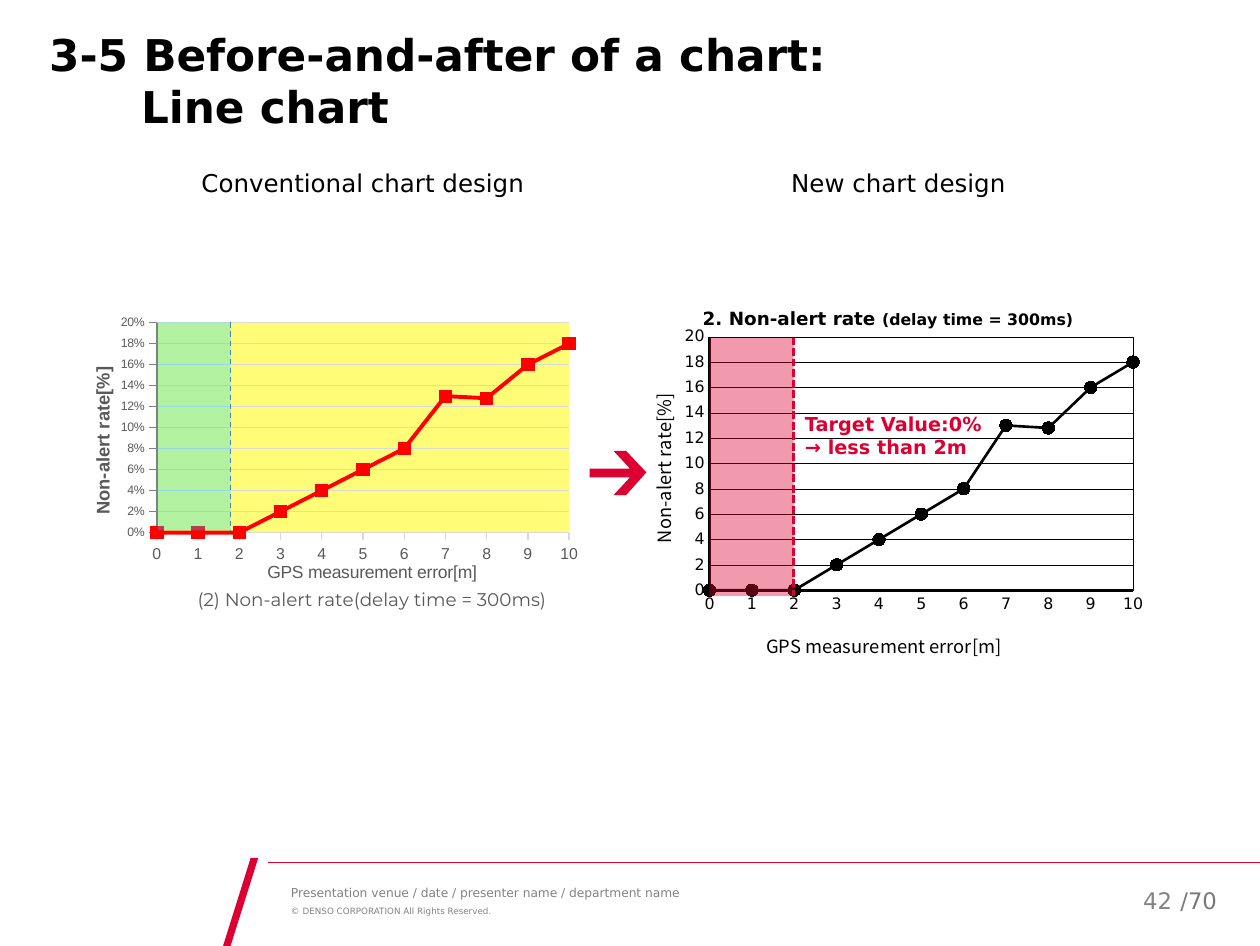
"""Build the before-and-after line chart slide."""
from lxml.etree import SubElement
from pptx import Presentation
from pptx.chart.data import CategoryChartData
from pptx.dml.color import RGBColor
from pptx.enum.chart import XL_CHART_TYPE, XL_MARKER_STYLE, XL_TICK_MARK
from pptx.enum.dml import MSO_LINE
from pptx.enum.shapes import MSO_CONNECTOR, MSO_SHAPE
from pptx.enum.text import MSO_ANCHOR, MSO_AUTO_SIZE, PP_ALIGN
from pptx.oxml import parse_xml
from pptx.oxml.ns import nsdecls, qn
from pptx.util import Inches, Pt

RED, INK, GREY, BLACK = "DC0032", "010000", "828282", "000000"
SANS, CJK = "DejaVu Sans", "Noto Sans CJK JP"


def tint(code):
    return RGBColor.from_string(code)


def style(font, size, color, face=SANS, bold=False):
    font.size, font.name, font.bold = Pt(size), face, bold
    font.color.rgb = tint(color)


def write(para, text, **look):
    run = para.add_run()
    run.text = text
    style(run.font, **look)


def stroke(line, color, width, dash=None):
    line.color.rgb = tint(color)
    line.width = Pt(width)
    if dash:
        line.dash_style = dash


def settle(owner, x, y, w=None, h=None):
    old = owner.find(qn("c:layout"))
    if old is not None:
        owner.remove(old)
    layout = parse_xml(f"<c:layout {nsdecls('c')}><c:manualLayout/></c:layout>")
    marks = {"xMode": "edge", "yMode": "edge", "x": x, "y": y}
    if w:
        marks = {"layoutTarget": "inner", **marks, "w": w, "h": h}
    for name, value in marks.items():
        SubElement(layout[0], qn("c:" + name)).set("val", str(value))
    head = owner.find(qn("c:tx"))
    if head is None:
        owner.insert(0, layout)
    else:
        head.addnext(layout)


def caption(title, runs, spot, turn=False):
    frame = title.text_frame
    for text, look in runs:
        write(frame.paragraphs[0], text, **look)
    if turn:
        frame._txBody.bodyPr.set("rot", "-5400000")
    settle(title._element, *spot)


def paint_plot(area, fill, edge):
    inside = (f'<a:solidFill><a:srgbClr val="{fill}"/></a:solidFill>'
              if fill else "<a:noFill/>")
    rim = (f'<a:ln w="3175"><a:solidFill><a:srgbClr val="{edge}"/></a:solidFill></a:ln>'
           if edge else "<a:ln><a:noFill/></a:ln>")
    for old in area.findall(qn("c:spPr")):
        area.remove(old)
    area.append(parse_xml(f"<c:spPr {nsdecls('c', 'a')}>{inside}{rim}</c:spPr>"))


class Deck:
    """Hold the slide and its grid of 100 columns by 75.1 rows."""

    def __init__(self):
        self.show = Presentation()
        self.show.slide_width, self.show.slide_height = Inches(10), Inches(7.51)
        self.unit = self.show.slide_width / 100
        self.slide = self.show.slides.add_slide(self.show.slide_layouts[5])
        self.shapes = self.slide.shapes

    def grid(self, *cells):
        return [round(cell * self.unit) for cell in cells]

    def title(self, box, first, second, **look):
        shape = self.shapes.title
        shape.left, shape.top, shape.width, shape.height = self.grid(*box)
        frame = shape.text_frame
        frame.auto_size, frame.vertical_anchor = MSO_AUTO_SIZE.NONE, MSO_ANCHOR.TOP
        frame.margin_left, frame.margin_right = self.grid(3.9, 15.7)
        frame.margin_top = frame.margin_bottom = 0
        para = frame.paragraphs[0]
        para.alignment = PP_ALIGN.LEFT
        inset, = self.grid(7.3)
        props = para._p.get_or_add_pPr()
        props.set("marL", str(inset))
        props.set("indent", str(-inset))
        write(para, first, **look)
        para.add_line_break()
        write(para, second, **look)

    def label(self, box, *lines, align=PP_ALIGN.LEFT, anchor=MSO_ANCHOR.TOP,
              tight=False, wrap=False, lead=None, **look):
        frame = self.shapes.add_textbox(*self.grid(*box)).text_frame
        frame.word_wrap, frame.vertical_anchor = wrap, anchor
        if tight:
            frame.margin_left = frame.margin_right = 0
            frame.margin_top = frame.margin_bottom = 0
        for spot, line in enumerate(lines):
            para = frame.add_paragraph() if spot else frame.paragraphs[0]
            para.alignment = align
            if lead:
                para.line_spacing = lead
            write(para, line, **look)

    def rule(self, start, end, color, width, dash=None):
        line = self.shapes.add_connector(MSO_CONNECTOR.STRAIGHT, *self.grid(*start, *end))
        stroke(line.line, color, width, dash)
        SubElement(line._element.spPr, qn("a:effectLst"))

    def outline(self, points, color):
        first, *rest = [self.grid(*point) for point in points]
        pen = self.shapes.build_freeform(*first)
        pen.add_line_segments(rest, close=True)
        self.fill(pen.convert_to_shape(), color)

    def fill(self, shape, color, alpha=None):
        shape.shadow.inherit = False
        shape.fill.solid()
        shape.fill.fore_color.rgb = tint(color)
        shape.line.fill.background()
        if alpha:
            hue = shape._element.spPr.find(".//" + qn("a:srgbClr"))
            SubElement(hue, qn("a:alpha")).set("val", str(alpha * 1000))

    def zone(self, box, color, alpha, *edge):
        left, top, width, height = box
        area = self.shapes.add_shape(MSO_SHAPE.RECTANGLE, *self.grid(*box))
        self.fill(area, color, alpha)
        self.rule((left + width, top), (left + width, top + height), *edge)

    def chart(self, box, values, peak, form, plot, mark, color, width, heads,
              axes, mesh, tick, fill=None, edge=None):
        data = CategoryChartData()
        data.categories = [str(step) for step in range(len(values))]
        data.add_series("Series 1", values)
        chart = self.shapes.add_chart(
            XL_CHART_TYPE.LINE_MARKERS, *self.grid(*box), data).chart
        chart.has_legend, chart.has_title = False, True
        caption(chart.chart_title, *heads[0])
        scale, cats = chart.value_axis, chart.category_axis
        for axis, head, (look, line) in zip((cats, scale), heads[1:], axes):
            caption(axis.axis_title, *head, turn=axis is scale)
            style(axis.tick_labels.font, **look)
            stroke(axis.format.line, *line)
            axis.major_tick_mark, axis.minor_tick_mark = tick, XL_TICK_MARK.NONE
        scale.minimum_scale, scale.maximum_scale = 0, peak
        scale.major_unit = peak / 10
        scale.tick_labels.number_format = form
        scale.tick_labels.number_format_is_linked = False
        scale.has_major_gridlines = True
        stroke(scale.major_gridlines.format.line, *mesh)
        root = scale._element
        for old in root.findall(qn("c:crossBetween")):
            root.remove(old)
        root.find(qn("c:crosses")).addnext(
            parse_xml(f'<c:crossBetween {nsdecls("c")} val="midCat"/>'))
        chart.plots[0].vary_by_categories = False
        series = chart.plots[0].series[0]
        series.smooth = False
        stroke(series.format.line, color, width)
        series.marker.style, series.marker.size = mark, 7
        series.marker.format.fill.solid()
        series.marker.format.fill.fore_color.rgb = tint(color)
        stroke(series.marker.format.line, color, 0.75)
        area = chart._chartSpace.find(".//" + qn("c:plotArea"))
        settle(area, *plot)
        paint_plot(area, fill, edge)


def main():
    deck = Deck()
    deck.rule((21.3, 68.45), (100, 68.45), RED, 0.75)
    deck.outline([(20.5, 68.1), (19.9, 68.1), (17.7, 75.1), (18.3, 75.1)], RED)
    deck.label((92.7, 69.9, 5.2, 3.2), "/70", anchor=MSO_ANCHOR.MIDDLE, size=13, color="797979")
    deck.label((82.8, 69.5, 11.2, 4), "42", anchor=MSO_ANCHOR.MIDDLE, wrap=True,
               align=PP_ALIGN.RIGHT, size=13, color=GREY)
    deck.label((23.1, 70.3, 63, 1.2), "Presentation venue / date / presenter name / department name",
               tight=True, wrap=True, size=7, color=GREY)
    deck.label((23.1, 71.9, 63, 0.8), "© DENSO CORPORATION All Rights Reserved.",
               tight=True, wrap=True, size=5, color=GREY)
    deck.title((0, 2.2, 100, 9), "3-5 Before-and-after of a chart:", "Line chart",
               size=25, color=INK, bold=True)
    for left, width, text in ((14.9, 27.8, "Conventional chart design"),
                              (61.7, 19.2, "New chart design")):
        deck.label((left, 12.6, width, 3.6), text, align=PP_ALIGN.CENTER,
                   lead=1.1, size=14, color=INK)

    rates = [0, 0, 0, 2, 4, 6, 8, 13, 12.8, 16, 18]
    across, up = "GPS measurement error[m]", "Non-alert rate[%]"
    dim = dict(color="595959", face="Arial")
    deck.chart(
        (6.5, 24.9, 40.5, 24.7), [round(rate / 100, 3) for rate in rates], 0.2, "0%",
        (0.147, 0.029, 0.808, 0.675), XL_MARKER_STYLE.SQUARE, "FF0000", 2.25,
        [([("(2) Non-alert rate(delay time = 300ms)",
            dict(size=10.5, color="595959", face="Montserrat"))], (0.22, 0.864)),
         ([(across, dict(size=10, **dim))], (0.357, 0.784)),
         ([(up, dict(size=10.5, bold=True, **dim))], (0.01, 0.16))],
        [(dict(size=9, **dim), ("D9D9D9", 0.75)), (dict(size=7, **dim), ("808080", 0.75))],
        ("D9D9D9", 0.75), XL_TICK_MARK.OUTSIDE, fill="FFFD78")
    deck.zone((12.5, 25.6, 5.8, 16.5), "00D6FF", 30, "497EBB", 0.75, MSO_LINE.DASH)
    deck.outline([(49.7, 35.8), (48.7, 35.8), (50, 37.2), (46.8, 37.2), (46.8, 37.9),
                  (50, 37.9), (48.7, 39.3), (49.7, 39.3), (51.3, 37.5)], RED)

    plain = dict(size=9, color=BLACK)
    cjk = dict(size=10.5, color=BLACK, face=CJK)
    deck.chart(
        (51.2, 22.3, 40.6, 30.4), rates, 20, "General",
        (0.126, 0.147, 0.828, 0.667), XL_MARKER_STYLE.CIRCLE, BLACK, 1.5,
        [([("2. Non-alert rate ", dict(size=10.5, color=BLACK, bold=True)),
           ("(delay time = 300ms)", dict(bold=True, **plain))], (0.105, 0.055)),
         ([(across, cjk)], (0.23, 0.91)),
         ([(up, cjk)], (0, 0.29))],
        [(plain, (BLACK, 1.5))] * 2, (BLACK, 0.25), XL_TICK_MARK.NONE, edge=BLACK)
    deck.zone((56.3, 26.8, 6.7, 20.5), RED, 40, RED, 1.5, MSO_LINE.SQUARE_DOT)
    deck.label((62.9, 32.2, 16.7, 4.7), "Target Value:0%", "→ less than 2m",
               size=11, color=RED, bold=True)
    deck.show.save("out.pptx")


if __name__ == "__main__":
    main()
